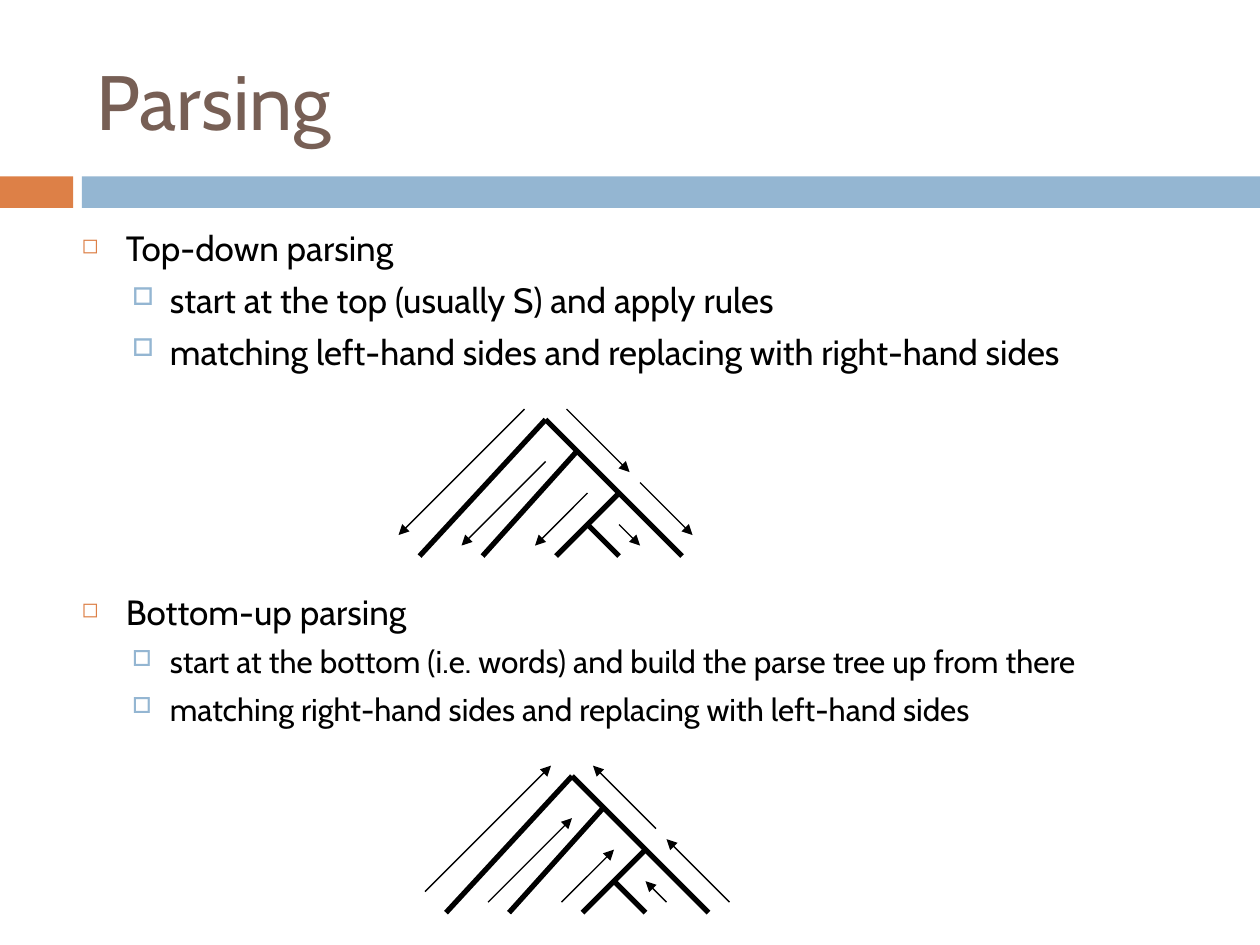
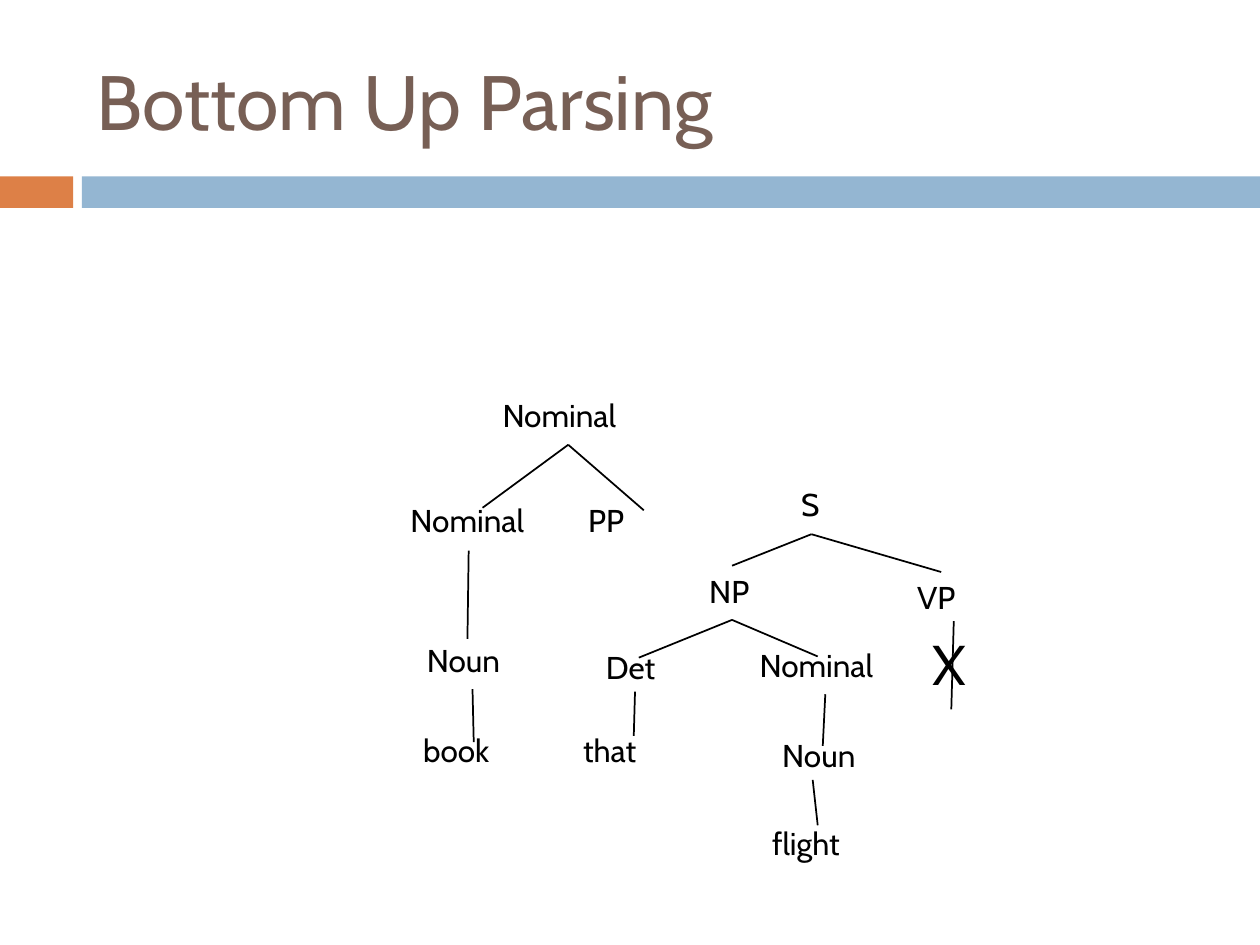
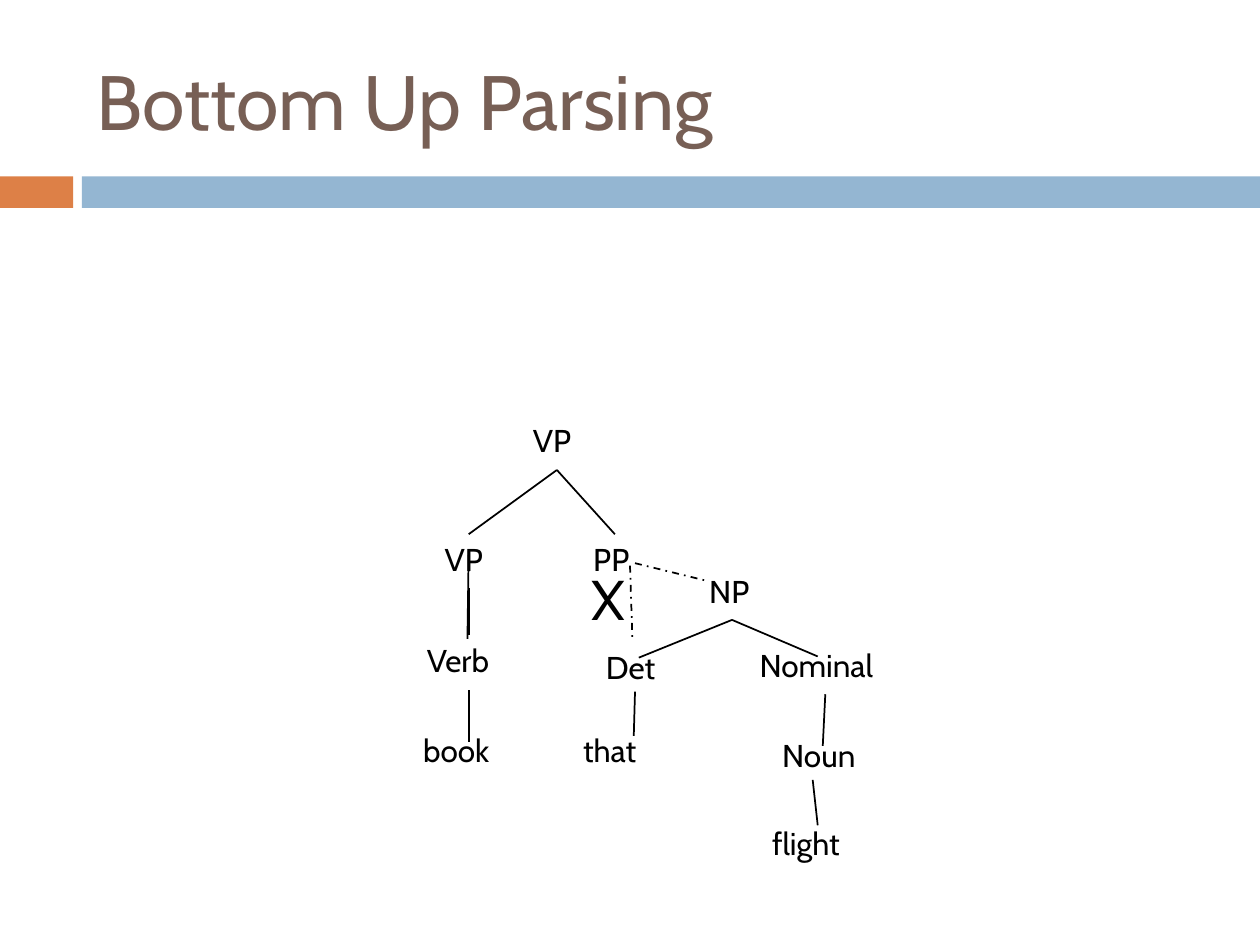
"""Build three slides on top-down and bottom-up parsing."""
from lxml import etree
from pptx import Presentation
from pptx.dml.color import RGBColor
from pptx.enum import dml, shapes, text
from pptx.oxml import ns
from pptx import util as u

FONT = "Cabin"
BLACK, BROWN, ORANGE, BLUE = "000000", "775F55", "DD8047", "94B6D2"
paint = RGBColor.from_string

deck = Presentation()
deck.slide_width, deck.slide_height = u.Inches(10), u.Inches(7.5)
CELL = deck.slide_width / 10


def write(page, words, place=None, box=None, size=18, color=BLACK, wrap=False,
          middle=False, before=0, indent=0, hang=0, bullet=None):
    """Write words in a new box at place, or as a further paragraph of box."""
    if box is None:
        box = page.shapes.add_textbox(*(int(CELL * part) for part in place))
        frame = box.text_frame
        frame.word_wrap = wrap
        frame.auto_size = (text.MSO_AUTO_SIZE.NONE if wrap
                           else text.MSO_AUTO_SIZE.SHAPE_TO_FIT_TEXT)
        frame.vertical_anchor = text.MSO_ANCHOR.MIDDLE if middle else text.MSO_ANCHOR.TOP
        para = frame.paragraphs[0]
    else:
        para = box.text_frame.add_paragraph()
    para.space_before = u.Pt(before)
    span = para.add_run()
    span.text = words
    span.font.name, span.font.size = FONT, u.Pt(size)
    span.font.color.rgb = paint(color)
    if bullet:
        sign, share, tint = bullet
        layout = para._p.get_or_add_pPr()
        layout.set("marL", str(int(CELL * indent)))
        layout.set("indent", str(int(-CELL * hang)))
        fill = etree.SubElement(layout, ns.qn("a:buClr"))
        etree.SubElement(fill, ns.qn("a:srgbClr"), val=tint)
        etree.SubElement(layout, ns.qn("a:buSzPct"), val=str(share * 1000))
        etree.SubElement(layout, ns.qn("a:buChar"), char=sign)
    return box


def connect(page, start, end, width=1, arrow=False, dash=None):
    """Draw a black line from start to end, with an arrowhead at end if asked."""
    line = page.shapes.add_connector(shapes.MSO_CONNECTOR.STRAIGHT,
                                     *(int(CELL * part) for part in (*start, *end)))
    line.line.color.rgb = paint(BLACK)
    line.line.width = u.Pt(width)
    if dash:
        line.line.dash_style = dash
    properties = line._element.spPr
    if arrow:
        etree.SubElement(properties.find(ns.qn("a:ln")), ns.qn("a:tailEnd"), type="triangle")
    etree.SubElement(properties, ns.qn("a:effectLst"))


pages = []
for title in ("Parsing", "Bottom Up Parsing", "Bottom Up Parsing"):
    page = deck.slides.add_slide(deck.slide_layouts[6])
    for left, width, color in ((0, 0.58, ORANGE), (0.65, 9.35, BLUE)):
        band = page.shapes.add_shape(shapes.MSO_SHAPE.RECTANGLE,
                                     *(int(CELL * part) for part in (left, 1.4, width, 0.25)))
        band.shadow.inherit = False
        band.fill.solid()
        band.fill.fore_color.rgb = paint(color)
        band.line.fill.background()
    write(page, title, (0.67, 0.25, 8.92, 1.08), size=44, color=BROWN, wrap=True, middle=True)
    pages.append(page)
overview, nominal_page, verb_page = pages

topic = dict(indent=0.35, hang=0.35, bullet=("◻", 60, ORANGE))
detail = dict(before=5.5, indent=0.7, hang=0.3, bullet=("□", 70, BLUE))
body = None
for words, size, style in (
    ("Top-down parsing", 20, dict(topic, before=7)),
    ("start at the top (usually S) and apply rules", 20, detail),
    ("matching left-hand sides and replacing with right-hand sides", 20, detail),
    ("Bottom-up parsing", 20, dict(topic, before=125)),
    ("start at the bottom (i.e. words) and build the parse tree up from there", 18, detail),
    ("matching right-hand sides and replacing with left-hand sides", 18, detail),
):
    body = write(overview, words, (0.55, 1.75, 8.26, 5.42), box=body, size=size, wrap=True, **style)

STEP = 1 / 12
branches = [((-12, 13), (0, 0)), ((0, 0), (13, 13)), ((7, 7), (1, 13)),
            ((4, 10), (7, 13)), ((3, 3), (-6, 13))]
climbs = [((-1, 12), (4, 7)), ((9, 12), (7, 10)), ((8, 5), (2, -1)),
          ((-8, 12), (0, 4)), ((-14, 11), (-2, -1))]
for across, down, upward, outer in ((4.33, 3.33, False, (14, 11)), (4.54, 6.16, True, (15, 12))):
    for lines, width, arrow in ((branches, 3, False), (climbs + [(outer, (9, 6))], 0.75, True)):
        for pair in lines:
            start, end = [(across + x * STEP, down + y * STEP) for x, y in pair]
            if arrow and not upward:
                start, end = end, start
            connect(overview, start, end, width, arrow)

shared_labels = [
    ("book", 3.26, 5.75, 0.8), ("that", 4.53, 5.75, 0.7), ("Det", 4.71, 5.09, 0.62),
    ("NP", 5.53, 4.49, 0.58), ("Nominal", 5.93, 5.08, 1.23),
    ("flight", 6.03, 6.49, 0.84), ("Noun", 6.11, 5.79, 0.86),
]
shared_lines = [
    ((3.72, 4.37), (3.71, 5.07)), ((5.04, 5.49), (5.03, 5.84)),
    ((5.81, 4.92), (5.07, 5.22)), ((5.81, 4.92), (6.49, 5.21)),
    ((6.45, 6.19), (6.49, 6.55)), ((6.55, 5.51), (6.53, 5.92)),
]
nominal_labels = [
    ("Noun", 3.29, 5.04, 0.86), ("S", 6.26, 3.8, 0.36), ("VP", 7.18, 4.54, 0.58),
    ("Nominal", 3.16, 3.93, 1.23), ("PP", 4.57, 3.93, 0.55), ("Nominal", 3.89, 3.09, 1.23),
]
nominal_lines = [
    ((3.75, 5.47), (3.76, 5.89)), ((6.44, 4.24), (5.81, 4.49)), ((6.44, 4.24), (7.47, 4.54)),
    ((7.57, 4.93), (7.55, 5.63)), ((4.51, 3.53), (3.83, 4.03)), ((4.51, 3.53), (5.11, 4.05)),
]
verb_labels = [
    ("Verb", 3.29, 5.04, 0.85), ("VP", 3.43, 4.24, 0.58),
    ("VP", 4.13, 3.29, 0.58), ("PP", 4.61, 4.24, 0.55),
]
verb_lines = [
    ((3.72, 5.48), (3.72, 5.89)), ((3.72, 4.67), (3.72, 5.04)),
    ((4.42, 3.73), (3.72, 4.24)), ((4.42, 3.73), (4.88, 4.24)),
]
for page, labels, lines, cross in (
    (nominal_page, nominal_labels, nominal_lines, (7.3, 4.95)),
    (verb_page, verb_labels, verb_lines, (4.6, 4.43)),
):
    for words, left, top, width in shared_labels + labels:
        write(page, words, (left, top, width, 0.44))
    for start, end in shared_lines + lines:
        connect(page, start, end)
    write(page, "X", (*cross, 0.53, 0.64), size=32)

for start, end in (((5, 4.49), (5.02, 5.09)), ((5.04, 4.47), (5.61, 4.61))):
    connect(verb_page, start, end, dash=dml.MSO_LINE.DASH_DOT)

deck.save("out.pptx")
